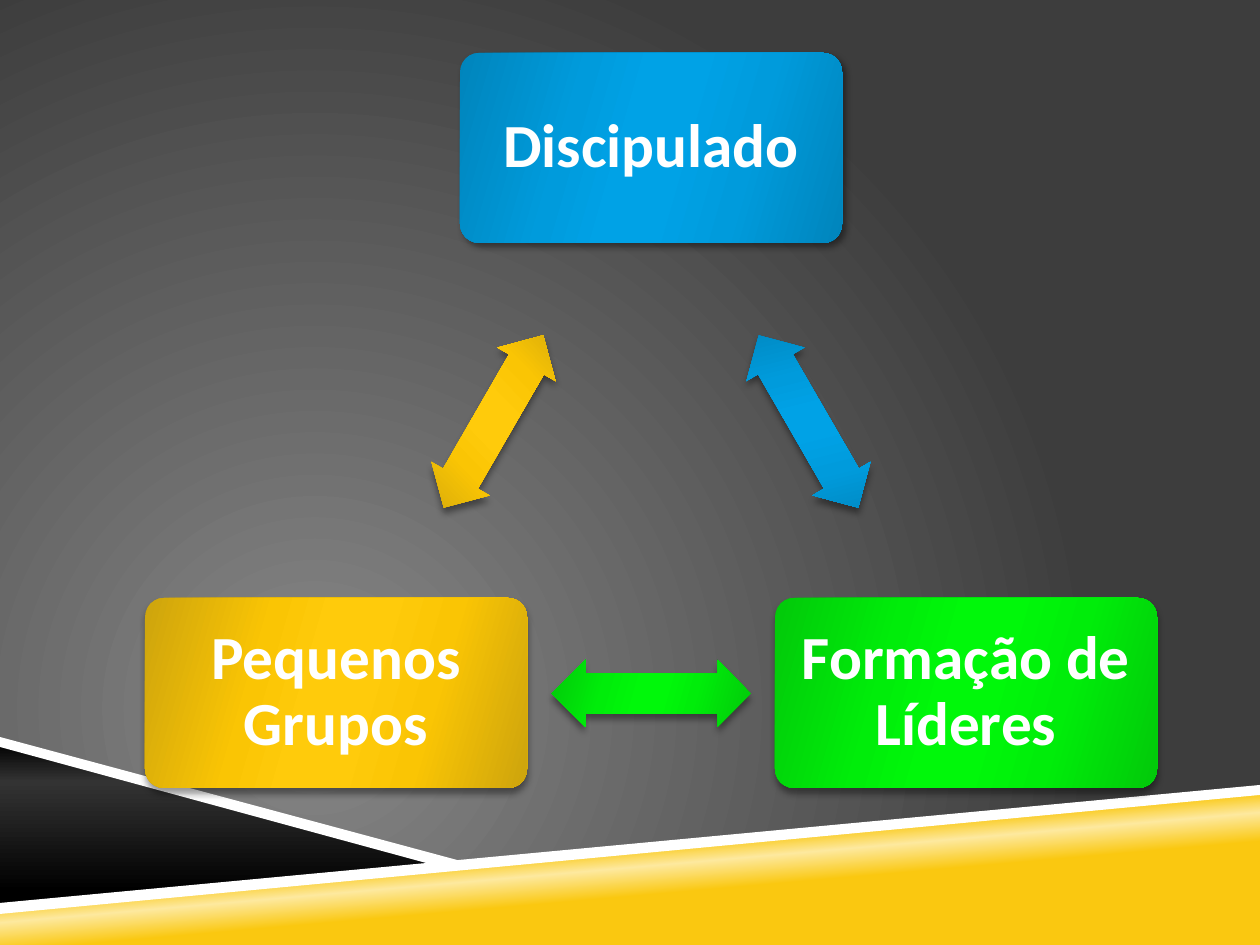
import pptx
import pptx.dml.color
import pptx.enum.shapes
import pptx.enum.text
import pptx.oxml
import pptx.oxml.ns
import pptx.util

RGB = pptx.dml.color.RGBColor
SHAPE = pptx.enum.shapes.MSO_SHAPE
NS = pptx.oxml.ns.nsdecls("a")
qn = pptx.oxml.ns.qn
PX = 914400 / 126

WHITE, BLACK = RGB(0xFF, 0xFF, 0xFF), RGB(0, 0, 0)
GREY, CHARCOAL, DARK = RGB(0x87, 0x87, 0x87), RGB(0x3D, 0x3D, 0x3D), RGB(0x33, 0x33, 0x33)
GOLD, PALE = RGB(0xFA, 0xC8, 0x10), RGB(0xFD, 0xE9, 0x9F)
# Edge, middle and centre tones of each glossy fill
BLUES = RGB(0x00, 0x85, 0xBC), RGB(0x00, 0x9B, 0xDC), RGB(0x00, 0xA2, 0xE6)
GREENS = RGB(0x02, 0xC9, 0x0A), RGB(0x00, 0xED, 0x0A), RGB(0x00, 0xF8, 0x0A)
YELLOWS = RGB(0xCD, 0xA4, 0x0D), RGB(0xFA, 0xC5, 0x04), RGB(0xFF, 0xCB, 0x0B)

BOX_W, BOX_H = 382, 190
ARROW_W, ARROW_H = 199, 67


def px(n):
    return pptx.util.Emu(round(n * PX))


def set_gradient(owner, element, stops, direction):
    """Give owner a gradient fill; element is the XML that holds it."""
    owner.fill.background()
    old = next(element.iter(qn("a:noFill")))
    gs = "".join(f'<a:gs pos="{pos * 1000}"><a:srgbClr val="{color}"/></a:gs>'
                 for pos, color in stops)
    new = pptx.oxml.parse_xml(f'<a:gradFill {NS} rotWithShape="1"><a:gsLst>{gs}</a:gsLst>'
                              f'{direction}</a:gradFill>')
    old.getparent().replace(old, new)


def linear(angle):
    return f'<a:lin ang="{angle * 60000}" scaled="0"/>'


def set_gloss(sp, tones):
    edge, middle, centre = tones
    stops = [(0, edge), (30, middle), (45, centre), (55, centre), (73, middle), (100, edge)]
    set_gradient(sp, sp._element, stops, linear(16))


def set_shadow(sp, alpha=40, dist=3.3, angle=90):
    sp.shadow.inherit = False
    effects = next(sp._element.iter(qn("a:effectLst")))
    effects.append(pptx.oxml.parse_xml(
        f'<a:outerShdw {NS} blurRad="{pptx.util.Pt(4)}" dist="{pptx.util.Pt(dist)}" '
        f'dir="{angle * 60000}" rotWithShape="0"><a:srgbClr val="{BLACK}">'
        f'<a:alpha val="{alpha * 1000}"/></a:srgbClr></a:outerShdw>'))


def add_polygon(s, points, color=None, stops=None, angle=0):
    fb = s.shapes.build_freeform(*points[0], scale=PX)
    fb.add_line_segments(points[1:], close=True)
    sp = fb.convert_to_shape()
    sp.shadow.inherit = False
    if stops:
        set_gradient(sp, sp._element, stops, linear(angle))
    else:
        sp.fill.solid()
        sp.fill.fore_color.rgb = color
    sp.line.fill.background()


def add_box(s, x, y, text, tones, **shadow):
    sp = s.shapes.add_shape(SHAPE.ROUNDED_RECTANGLE, px(x), px(y), px(BOX_W), px(BOX_H))
    sp.adjustments[0] = 0.1
    set_gloss(sp, tones)
    sp.line.fill.background()
    set_shadow(sp, **shadow)
    tf = sp.text_frame
    tf.word_wrap = True
    tf.vertical_anchor = pptx.enum.text.MSO_ANCHOR.MIDDLE
    tf.margin_left = tf.margin_top = tf.margin_right = tf.margin_bottom = px(19)
    p = tf.paragraphs[0]
    p.text = text
    p.alignment = pptx.enum.text.PP_ALIGN.CENTER
    p.line_spacing = 0.9
    p.font.name = "Calibri"
    p.font.size = pptx.util.Pt(35)
    p.font.bold = True
    p.font.color.rgb = WHITE


def add_arrow(s, x, y, rotation, tones):
    sp = s.shapes.add_shape(SHAPE.LEFT_RIGHT_ARROW, px(x), px(y), px(ARROW_W), px(ARROW_H))
    sp.adjustments[0], sp.adjustments[1] = 0.6, 0.5
    sp.rotation = rotation
    set_gloss(sp, tones)
    sp.line.fill.background()
    set_shadow(sp)


def add_backdrop(s):
    radial = ('<a:path path="circle"><a:fillToRect l="50000" t="100000" '
              'r="100000" b="50000"/></a:path>')
    set_gradient(s.background, s._element, [(0, GREY), (100, CHARCOAL)], radial)
    # Gold and black wedges
    add_polygon(s, [(0, 908), (1260, 790), (1260, 945), (0, 945)],
                stops=[(39, GOLD), (50, PALE), (58, GOLD)], angle=265)
    add_polygon(s, [(0, 742), (452, 863), (0, 908)],
                stops=[(0, BLACK), (24, DARK), (90, BLACK)], angle=90)
    # White edges
    add_polygon(s, [(1260, 785), (0, 903), (0, 914), (1260, 795)], WHITE)
    add_polygon(s, [(0, 737), (0, 747), (441, 867), (472, 864)], WHITE)


def main():
    prs = pptx.Presentation()
    prs.slide_width, prs.slide_height = px(1260), px(945)
    s = prs.slides.add_slide(prs.slide_layouts[6])
    add_backdrop(s)

    # Cycle of three boxes joined by arrows
    add_box(s, 460, 53, "Discipulado", BLUES, alpha=43, dist=3, angle=45)
    add_arrow(s, 709, 388, 60, BLUES)
    add_box(s, 775, 598, "Formação de Líderes", GREENS)
    add_arrow(s, 552, 660, 180, GREENS)
    add_box(s, 145, 598, "Pequenos Grupos", YELLOWS)
    add_arrow(s, 394, 388, 300, YELLOWS)

    prs.save("out.pptx")


if __name__ == "__main__":
    main()
